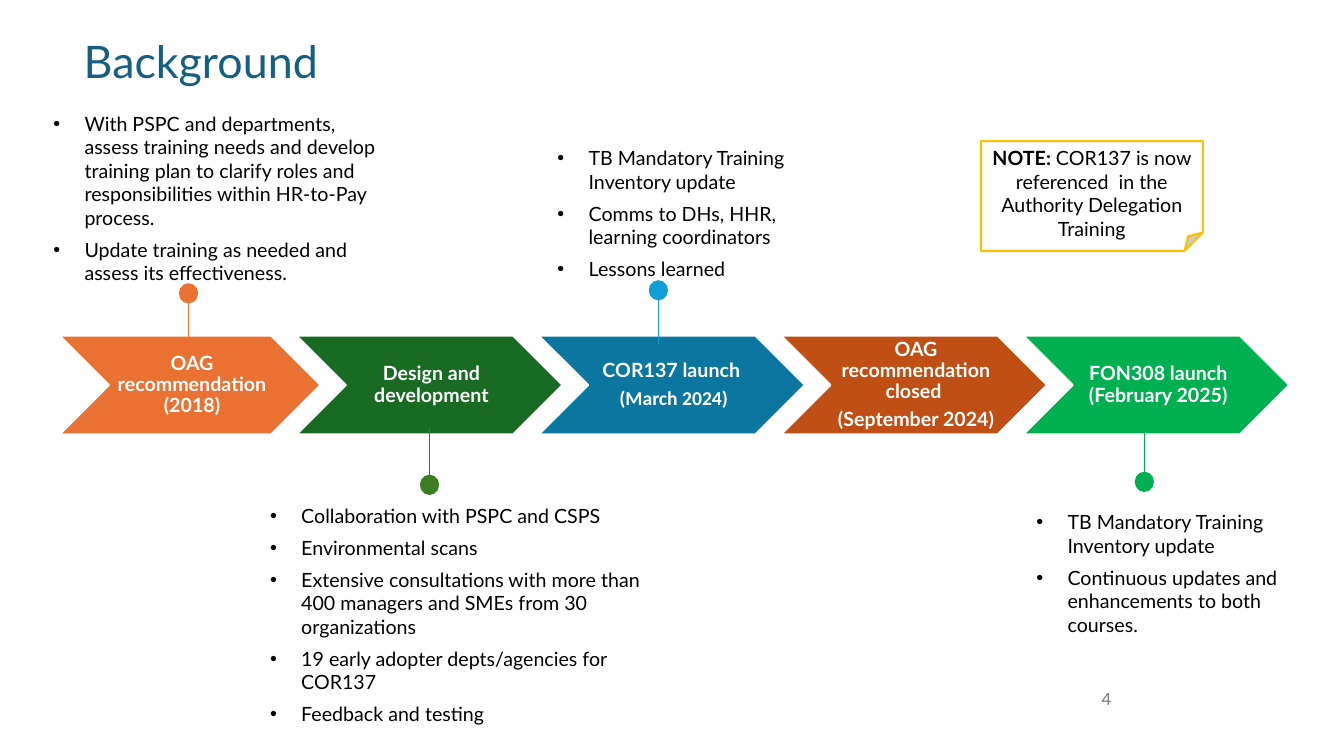
from dataclasses import dataclass

from lxml import etree
from pptx import Presentation
from pptx import util as u
from pptx.dml.color import RGBColor
from pptx.enum import shapes, text
from pptx.oxml.ns import qn

KIND = shapes.MSO_SHAPE
ALIGN = text.PP_ALIGN
ANCHOR = text.MSO_ANCHOR


@dataclass(frozen=True)
class Theme:
    font: str = "Lato"
    alt: str = "Calibri"
    title: int = 32
    body: int = 14
    small: int = 12
    edge: float = 1.5
    thin: float = 1
    ink: str = "000000"
    white: str = "FFFFFF"
    grey: str = "797979"
    teal: str = "156082"
    orange: str = "E97132"
    forest: str = "196B24"
    blue: str = "0B76A0"
    rust: str = "C04F15"
    green: str = "00B050"
    sky: str = "0F9ED5"
    leaf: str = "3B7D23"
    gold: str = "FFC000"


class Board:
    """Draws on one slide; lengths are columns and rows of a 0.1 inch grid."""

    def __init__(self, deck, theme):
        self.theme = theme
        self.slide = deck.slides.add_slide(deck.slide_layouts[6])

    def cell(self, *spans):
        return [u.Inches(span / 10) for span in spans]

    def run(self, para, words, color, size=None, bold=False, font=None):
        run = para.add_run()
        run.text = words
        run.font.name = font or self.theme.font
        run.font.size = u.Pt(size or self.theme.body)
        run.font.bold = bold
        run.font.color.rgb = RGBColor.from_string(color)

    def box(self, area, inset=None, anchor=ANCHOR.TOP):
        frame = self.slide.shapes.add_textbox(*self.cell(*area)).text_frame
        frame.word_wrap = True
        frame.vertical_anchor = anchor
        if inset:
            (frame.margin_left, frame.margin_top,
             frame.margin_right, frame.margin_bottom) = self.cell(*inset)
        return frame

    def paras(self, frame, count):
        return [frame.paragraphs[0]] + [frame.add_paragraph() for _ in range(count - 1)]

    def line(self, area, words, color, size, align=ALIGN.LEFT, **look):
        para = self.box(area, **look).paragraphs[0]
        para.alignment = align
        self.run(para, words, color, size)

    def shape(self, kind, area, fill, edge):
        shape = self.slide.shapes.add_shape(kind, *self.cell(*area))
        shape.shadow.inherit = False
        shape.fill.solid()
        shape.fill.fore_color.rgb = RGBColor.from_string(fill)
        shape.line.color.rgb = RGBColor.from_string(edge)
        shape.line.width = u.Pt(self.theme.edge)
        return shape

    def step(self, left, wide, fill, lines, gap):
        top, high, notch = 33.3, 9.8, 4.9
        self.shape(KIND.CHEVRON, (left, top, wide, high), fill, self.theme.white)
        frame = self.box((left + notch, top, wide - 2 * notch, high),
                         (0.6, 0.2, 0.2, 0.2), ANCHOR.MIDDLE)
        for para, (words, font) in zip(self.paras(frame, len(lines)), lines):
            para.alignment = ALIGN.CENTER
            para.line_spacing = 0.9
            para.space_after = u.Pt(gap)
            self.run(para, words, self.theme.white, bold=True, font=font)

    def list(self, area, items):
        frame = self.box(area)
        frame.auto_size = text.MSO_AUTO_SIZE.SHAPE_TO_FIT_TEXT
        hang = u.Inches(0.31)
        for para, words in zip(self.paras(frame, len(items)), items):
            props = para._p.get_or_add_pPr()
            props.set("marL", str(hang))
            props.set("indent", str(-hang))
            etree.SubElement(props, qn("a:buFont")).set("typeface", "Arial")
            etree.SubElement(props, qn("a:buChar")).set("char", "•")
            para.space_after = u.Pt(6)
            self.run(para, words, self.theme.ink)

    def pin(self, col, start, end, dot, color):
        ends = self.cell(col, start, col, end)
        stem = self.slide.shapes.add_connector(shapes.MSO_CONNECTOR.STRAIGHT, *ends)
        stem.line.color.rgb = RGBColor.from_string(color)
        stem.line.width = u.Pt(self.theme.thin)
        etree.SubElement(stem._element.spPr, qn("a:effectLst"))
        self.shape(KIND.OVAL, (col - 0.85, dot, 1.7, 1.8), color, color)

    def note(self, area, head, words):
        shape = self.shape(KIND.FOLDED_CORNER, area, self.theme.white, self.theme.gold)
        frame = shape.text_frame
        frame.word_wrap = True
        frame.vertical_anchor = ANCHOR.TOP
        para = frame.paragraphs[0]
        para.alignment = ALIGN.CENTER
        self.run(para, head, self.theme.ink, bold=True)
        self.run(para, words, self.theme.ink)


def main():
    deck = Presentation()
    deck.slide_width, deck.slide_height = u.Inches(13.33), u.Inches(7.5)
    theme = Theme()
    board = Board(deck, theme)

    # Title and page number
    board.line((8.3, 3.3, 59.4, 9.6), "Background", theme.teal, theme.title,
               inset=(0, 0, 0, 0))
    board.line((87.9, 67.3, 23.3, 4), "4", theme.grey, theme.small, ALIGN.RIGHT,
               anchor=ANCHOR.MIDDLE)

    # Timeline: a shorter first step, then equal ones
    gap = 0.35 * theme.body
    board.step(5.9, 25.9, theme.orange, [("OAG recommendation (2018)", theme.font)], gap)
    steps = [
        (theme.forest, [("Design and development", theme.font)], gap),
        (theme.blue, [("COR137 launch ", theme.font), ("(March 2024)", theme.alt)], gap),
        (theme.rust, [("OAG recommendation closed ", theme.font),
                      ("(September 2024)", theme.font)], gap),
        (theme.green, [("FON308 launch", theme.font), ("(February 2025)", theme.font)], 0),
    ]
    for index, (fill, lines, after) in enumerate(steps):
        board.step(29.4 + 24.03 * index, 26.4, fill, lines, after)

    # Details of the steps
    board.list((4.3, 10.6, 34.8, 18.3), [
        "With PSPC and departments, assess training needs and develop training plan "
        "to clarify roles and responsibilities within HR-to-Pay process.",
        "Update training as needed and assess its effectiveness."])
    board.list((25.8, 49.5, 40.3, 23.2), [
        "Collaboration with PSPC and CSPS",
        "Environmental scans",
        "Extensive consultations with more than 400 managers and SMEs from 30 organizations",
        "19 early adopter depts/agencies for COR137",
        "Feedback and testing"])
    board.list((54.3, 14, 29.1, 14.5), [
        "TB Mandatory Training Inventory update",
        "Comms to DHs, HHR, learning coordinators",
        "Lessons learned"])
    board.list((101.8, 50.1, 26.1, 16.8), [
        "TB Mandatory Training Inventory update",
        "Continuous updates and enhancements to both courses."])

    # Pins that tie the details to the steps
    board.pin(18.7, 29.9, 34.7, 28.2, theme.orange)
    board.pin(42.6, 42.5, 47.2, 47.2, theme.leaf)
    board.pin(65.3, 29.7, 34.1, 27.9, theme.sky)
    board.pin(113.5, 42.5, 47.2, 46.9, theme.green)

    # Note
    board.note((97.3, 14, 22, 10.9), "NOTE: ",
               "COR137 is now referenced  in the Authority Delegation Training")

    deck.save("out.pptx")


if __name__ == "__main__":
    main()
